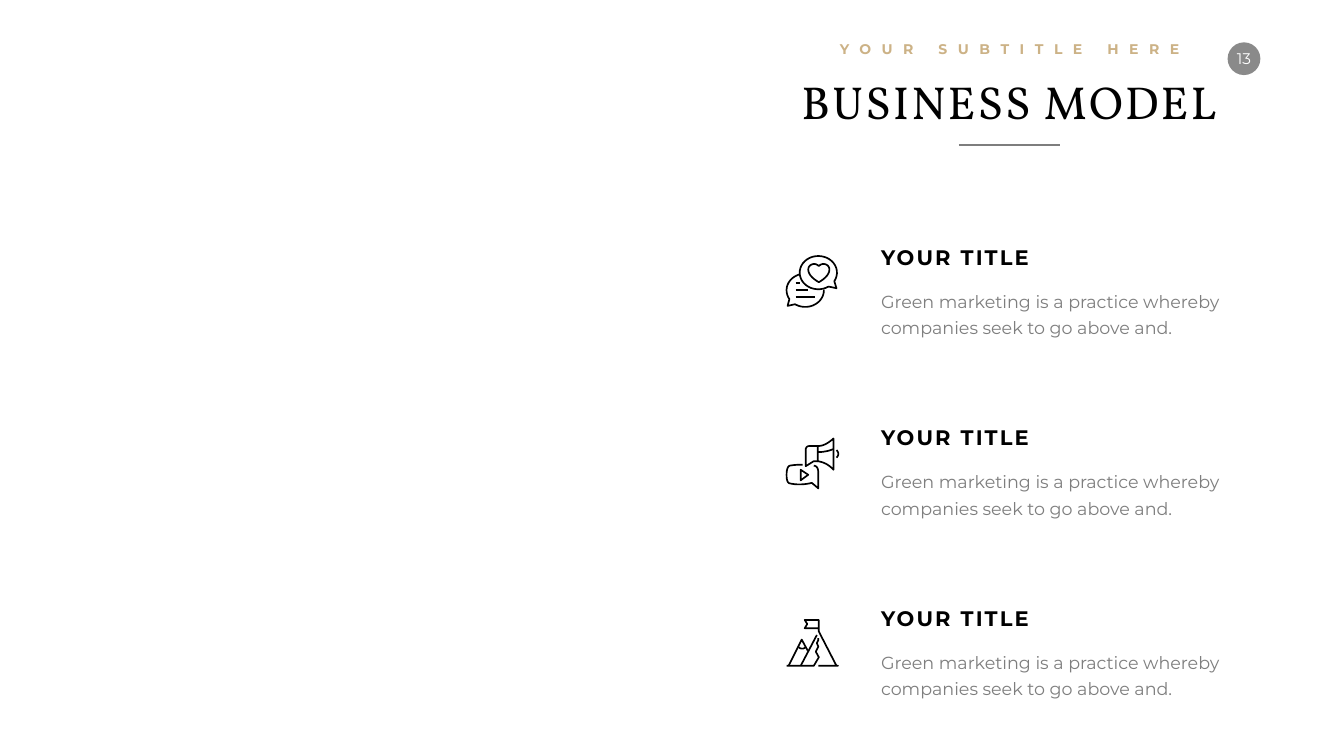
from math import cos, radians, sin

from pptx import Presentation
from pptx.dml.color import RGBColor
from pptx.enum.shapes import MSO_CONNECTOR, MSO_SHAPE
from pptx.enum.text import MSO_ANCHOR, MSO_AUTO_SIZE, PP_ALIGN
from pptx.oxml.ns import qn
from pptx.util import Inches, Pt
from lxml import etree

WIDTH, HEIGHT = Inches(26.66), Inches(15)
COLORS = {"ink": "000000", "gold": "CCB286", "gray": "7E7E7E",
          "badge": "8A8A8A", "white": "FFFFFF"}
SANS, SERIF = "Montserrat", "Vollkorn"
ITEM_TITLE = "YOUR TITLE"
ITEM_TEXT = "Green marketing is a practice whereby companies seek to go above and."

# Rows of the item list, in percent of the slide height
ITEM_TOP, ITEM_PITCH = 31.93, 23.88
ICON_TOP, ICON_PITCH = 33.73, 24.07
ICON_LEFT, TEXT_LEFT = 58.45, 65.19


def across(percent):
    return round(WIDTH * percent / 100)


def down(percent):
    return round(HEIGHT * percent / 100)


def area(left, top, width, height):
    return across(left), down(top), across(width), down(height)


def color(name):
    return RGBColor.from_string(COLORS[name])


def write(shape, text, size, ink, font=SANS, bold=False, spacing=0,
          align=PP_ALIGN.LEFT, anchor=MSO_ANCHOR.TOP, wrap=False):
    frame = shape.text_frame
    frame.text = text
    frame.word_wrap = wrap
    frame.vertical_anchor = anchor
    para = frame.paragraphs[0]
    para.alignment = align
    span = para.runs[0]
    span.font.name, span.font.size, span.font.bold = font, Pt(size), bold
    span.font.color.rgb = color(ink)
    track(span, spacing)
    return para


def track(span, points):
    span.font._element.set("spc", str(points * 100))


def add_text(page, place, text, size, ink, **style):
    box = page.shapes.add_textbox(*place)
    para = write(box, text, size, ink, **style)
    box.text_frame.auto_size = MSO_AUTO_SIZE.SHAPE_TO_FIT_TEXT
    return para


def add_heading(page):
    title = page.shapes.title
    title.left, title.top, title.width, title.height = area(58.55, 9.33, 33.08, 8.07)
    write(title, "BUSINESS MODEL", 66, "ink", font=SERIF, spacing=3,
          align=PP_ALIGN.CENTER)
    title.text_frame.auto_size = MSO_AUTO_SIZE.SHAPE_TO_FIT_TEXT

    # The last letter carries no tracking, so the line stays centred
    para = add_text(page, area(61.67, 5.07, 26.89, 2.93), "YOUR SUBTITLE HER", 20,
                    "gold", bold=True, spacing=15, align=PP_ALIGN.CENTER)
    last = para.add_run()
    last.text = "E"
    last.font.name, last.font.size, last.font.bold = SANS, Pt(20), True
    last.font.color.rgb = color("gold")
    track(last, 0)

    rule = page.shapes.add_connector(MSO_CONNECTOR.STRAIGHT, across(71.34), down(19.2),
                                     across(78.84), down(19.2))
    rule.line.color.rgb = color("gray")
    rule.line.width = Pt(3)
    etree.SubElement(rule._element.spPr, qn("a:effectLst"))


def add_page_number(page):
    badge = page.shapes.add_shape(MSO_SHAPE.OVAL, *area(91.34, 5.6, 2.44, 4.33))
    badge.shadow.inherit = False
    badge.fill.solid()
    badge.fill.fore_color.rgb = color("badge")
    badge.line.fill.background()
    frame = badge.text_frame
    frame.margin_left = frame.margin_right = frame.margin_top = frame.margin_bottom = 0
    write(badge, "13", 22, "white", align=PP_ALIGN.CENTER, anchor=MSO_ANCHOR.MIDDLE)


# Icons: strokes in hundredths of an inch; a pair is a point,
# six numbers are the two handles and the end of a curve
def arc(x, y, rx, ry, start, end, steps=36):
    angles = [radians(start + (end - start) * i / steps) for i in range(steps + 1)]
    return [(x + rx * cos(a), y + ry * sin(a)) for a in angles]


def flatten(stroke, steps=10):
    points = []
    for part in stroke:
        if len(part) == 2:
            points.append(part)
            continue
        knots = [points[-1], part[:2], part[2:4], part[4:]]
        for i in range(1, steps + 1):
            t = i / steps
            weights = ((1 - t) ** 3, 3 * t * (1 - t) ** 2, 3 * t * t * (1 - t), t ** 3)
            points.append(tuple(sum(w * k[axis] for w, k in zip(weights, knots))
                                for axis in (0, 1)))
    return [(x * 10, y * 10) for x, y in points]


def add_icon(page, strokes, left, top):
    contours = [flatten(stroke) for stroke in strokes]
    builder = page.shapes.build_freeform(*contours[0][0], scale=Inches(1) / 1000)
    for points in contours:
        builder.move_to(*points[0])
        builder.add_line_segments(points[1:], close=False)
    icon = builder.convert_to_shape(across(left), down(top))
    icon.shadow.inherit = False
    icon.fill.background()
    icon.line.color.rgb = color("ink")
    icon.line.width = Pt(2.4)


def chat_icon():
    return [
        arc(65, 35, 37, 33, 57, 391) + [(101, 66), (85, 62.5)],
        arc(39, 70, 37, 33, 252, 148) + [(4, 101)] + arc(39, 70, 37, 33, 123, -2),
        [(66, 22), (59, 14, 45, 18, 45, 29), (45, 43, 66, 54, 66, 54),
         (66, 54, 87, 43, 87, 29), (87, 18, 73, 14, 66, 22)],
        [(20, 83), (58, 83)], [(20, 70), (44, 70)], [(20, 56), (28, 56)],
    ]


def megaphone_icon():
    return [
        [(34, 55), (20, 55, 14, 56, 8, 57), (4, 59, 2, 65, 2, 75),
         (2, 86, 4, 91, 8, 92), (20, 95, 38, 95, 52, 91), (65, 102), (65, 75),
         (65, 64, 64, 58, 56, 57)],
        [(30, 65), (45, 75), (30, 86), (30, 65)],
        [(64, 18), (47, 18), (43, 18, 40, 21, 40, 25), (40, 58), (56, 48), (64, 48)],
        [(64, 18), (75, 18, 85, 12, 95, 3), (95, 65),
         (85, 54, 75, 50, 64, 48), (64, 18)],
        [(64, 30), (75, 30, 85, 28, 95, 24)],
        [(101, 26), (106, 31, 106, 36, 101, 41)],
    ]


def summit_icon():
    return [
        [(2, 93), (56, 93), (66, 76), (60, 65), (65, 55), (62, 48), (65, 42), (65, 38)],
        [(6, 93), (32, 41), (44, 63)],
        [(26, 56), (30, 60, 36, 60, 40, 56)],
        [(30, 93), (62, 32)],
        [(66, 18.5), (38, 18.5), (43, 10), (38, 2), (66, 2), (66, 25),
         (101, 93), (104, 93), (65, 93)],
    ]


def add_item(page, index, strokes):
    top = ITEM_TOP + ITEM_PITCH * index
    body = add_text(page, area(TEXT_LEFT, top + 5.47, 26.89, 7.47), ITEM_TEXT, 25,
                    "gray", wrap=True)
    body.line_spacing, body.space_before = Pt(38), Pt(24)
    add_text(page, area(TEXT_LEFT, top, 12.08, 4.07), ITEM_TITLE, 30, "ink",
             bold=True, spacing=3, anchor=MSO_ANCHOR.MIDDLE)
    add_icon(page, strokes, ICON_LEFT, ICON_TOP + ICON_PITCH * index)


def main():
    deck = Presentation()
    deck.slide_width, deck.slide_height = WIDTH, HEIGHT
    page = deck.slides.add_slide(deck.slide_layouts[5])
    add_page_number(page)
    add_heading(page)
    for index, strokes in enumerate((chat_icon(), megaphone_icon(), summit_icon())):
        add_item(page, index, strokes)
    deck.save("out.pptx")


if __name__ == "__main__":
    main()
